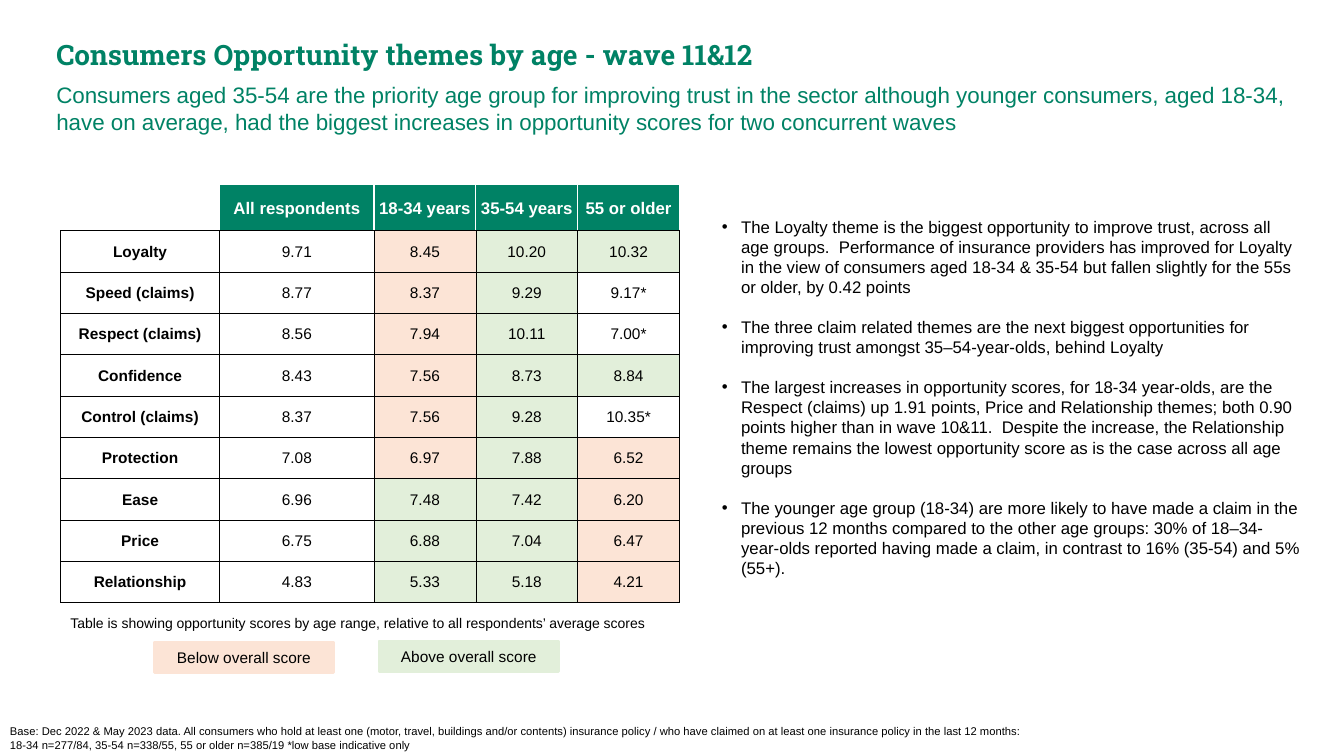
from dataclasses import dataclass

from lxml.etree import SubElement
from pptx import Presentation
from pptx.dml.color import RGBColor
from pptx.enum.shapes import MSO_SHAPE
from pptx.enum.text import MSO_ANCHOR, PP_ALIGN
from pptx.oxml.ns import qn
from pptx.util import Inches, Pt


@dataclass(frozen=True)
class Theme:
    green: str = "008265"
    black: str = "000000"
    white: str = "FFFFFF"
    below: str = "FCE4D6"
    above: str = "E2EFDA"
    body_font: str = "Arial"
    title_font: str = "Roboto Slab"
    title_size: int = 20
    subtitle_size: int = 16
    body_size: int = 12
    cell_size: int = 11
    note_size: int = 10
    base_size: int = 8


THEME = Theme()

HEADERS = ["", "All respondents", "18-34 years", "35-54 years", "55 or older"]
SCORES = [
    ("Loyalty", "9.71", "8.45", "10.20", "10.32"),
    ("Speed (claims)", "8.77", "8.37", "9.29", "9.17*"),
    ("Respect (claims)", "8.56", "7.94", "10.11", "7.00*"),
    ("Confidence", "8.43", "7.56", "8.73", "8.84"),
    ("Control (claims)", "8.37", "7.56", "9.28", "10.35*"),
    ("Protection", "7.08", "6.97", "7.88", "6.52"),
    ("Ease", "6.96", "7.48", "7.42", "6.20"),
    ("Price", "6.75", "6.88", "7.04", "6.47"),
    ("Relationship", "4.83", "5.33", "5.18", "4.21"),
]
COLUMN_WIDTHS = [1.58, 1.53, 1.01, 1.01, 1.01]
HEADER_HEIGHT, ROW_HEIGHT = 0.46, 0.41

FINDINGS = [
    "The Loyalty theme is the biggest opportunity to improve trust, across all age groups.  "
    "Performance of insurance providers has improved for Loyalty in the view of consumers aged "
    "18-34 & 35-54 but fallen slightly for the 55s or older, by 0.42 points",
    "The three claim related themes are the next biggest opportunities for improving trust "
    "amongst 35–54-year-olds, behind Loyalty",
    "The largest increases in opportunity scores, for 18-34 year-olds, are the Respect (claims) "
    "up 1.91 points, Price and Relationship themes; both 0.90 points higher than in wave 10&11.  "
    "Despite the increase, the Relationship theme remains the lowest opportunity score as is the "
    "case across all age groups",
    "The younger age group (18-34) are more likely to have made a claim in the previous 12 months "
    "compared to the other age groups: 30% of 18–34-year-olds reported having made a claim, in "
    "contrast to 16% (35-54) and 5% (55+).",
]


def set_attributes(target, values):
    for name, value in values.items():
        setattr(target, name, value)


def format_font(font, size, color=THEME.black, bold=False, name=THEME.body_font):
    set_attributes(font, {"name": name, "size": Pt(size), "bold": bold})
    font.color.rgb = RGBColor.from_string(color)


def add_text(slide, position, text, size, **font_format):
    frame = slide.shapes.add_textbox(*map(Inches, position)).text_frame
    frame.word_wrap = True
    paragraph = frame.paragraphs[0]
    paragraph.text = text
    format_font(paragraph.font, size, **font_format)


def add_bullets(slide, position, items):
    frame = slide.shapes.add_textbox(*map(Inches, position)).text_frame
    set_attributes(frame, {"word_wrap": True, "margin_left": 0, "margin_top": 0,
                           "margin_right": 0, "margin_bottom": 0})
    for index, item in enumerate(items):
        paragraph = frame.paragraphs[0] if index == 0 else frame.add_paragraph()
        paragraph.text = item
        if index:
            paragraph.space_before = Pt(14)
        properties = paragraph._p.get_or_add_pPr()
        properties.set("marL", str(Inches(0.19)))
        properties.set("indent", str(-Inches(0.19)))
        SubElement(properties, qn("a:buFont"), typeface=THEME.body_font)
        SubElement(properties, qn("a:buChar"), char="•")
        format_font(paragraph.font, THEME.body_size)


def add_legend_box(slide, position, text, color):
    shape = slide.shapes.add_shape(MSO_SHAPE.RECTANGLE, *map(Inches, position))
    shape.shadow.inherit = False
    shape.fill.solid()
    shape.fill.fore_color.rgb = RGBColor.from_string(color)
    shape.line.color.rgb = RGBColor.from_string(color)
    shape.line.width = Pt(2)
    shape.text_frame.vertical_anchor = MSO_ANCHOR.MIDDLE
    paragraph = shape.text_frame.paragraphs[0]
    paragraph.text = text
    paragraph.alignment = PP_ALIGN.CENTER
    format_font(paragraph.font, THEME.cell_size)


def set_borders(cell, borders):
    properties = cell._tc.get_or_add_tcPr()
    for index, (color, width) in enumerate(borders):
        tag = ("a:lnL", "a:lnR", "a:lnT", "a:lnB")[index]
        line = SubElement(properties, qn(tag), w=str(Pt(width)))
        fill = SubElement(line, qn("a:solidFill"))
        SubElement(fill, qn("a:srgbClr"), val=color)


def fill_cell(cell, text, fill, borders, size, **font_format):
    set_attributes(cell, {"margin_left": Inches(0.01), "margin_right": Inches(0.01),
                          "margin_top": Inches(0.01), "margin_bottom": 0,
                          "vertical_anchor": MSO_ANCHOR.MIDDLE})
    set_borders(cell, borders)
    cell.fill.solid()
    cell.fill.fore_color.rgb = RGBColor.from_string(fill)
    paragraph = cell.text_frame.paragraphs[0]
    paragraph.text = text
    paragraph.alignment = PP_ALIGN.CENTER
    format_font(paragraph.font, size, **font_format)


def score_fill(score, overall):
    # Starred scores have a low base and stay uncoloured
    if score.endswith("*") or score == overall:
        return THEME.white
    return THEME.below if float(score) < float(overall) else THEME.above


def add_score_table(slide, left, top):
    height = HEADER_HEIGHT + ROW_HEIGHT * len(SCORES)
    frame = slide.shapes.add_table(len(SCORES) + 1, len(HEADERS), Inches(left), Inches(top),
                                   Inches(sum(COLUMN_WIDTHS)), Inches(height))
    table = frame.table
    set_attributes(table, {"first_row": False, "horz_banding": False})
    for column, width in zip(table.columns, COLUMN_WIDTHS):
        column.width = Inches(width)
    for index, row in enumerate(table.rows):
        row.height = Inches(ROW_HEIGHT if index else HEADER_HEIGHT)

    # Header row
    black_line, white_line = (THEME.black, 0.5), (THEME.white, 1)
    for column, header in enumerate(HEADERS):
        fill_cell(table.cell(0, column), header, THEME.green if header else THEME.white,
                  [white_line] * 3 + [black_line], THEME.body_size,
                  color=THEME.white, bold=True)

    # Theme rows
    for row, (theme_name, overall, *age_scores) in enumerate(SCORES, start=1):
        fill_cell(table.cell(row, 0), theme_name, THEME.white, [black_line] * 4,
                  THEME.cell_size, bold=True)
        for column, score in enumerate([overall, *age_scores], start=1):
            fill_cell(table.cell(row, column), score, score_fill(score, overall),
                      [black_line] * 4, THEME.cell_size)


def main():
    presentation = Presentation()
    presentation.slide_width, presentation.slide_height = Inches(13.33), Inches(7.5)
    slide = presentation.slides.add_slide(presentation.slide_layouts[6])

    # Headings
    add_text(slide, (0.46, 0.32, 12.28, 0.44), "Consumers Opportunity themes by age - wave 11&12",
             THEME.title_size, color=THEME.green, bold=True, name=THEME.title_font)
    add_text(slide, (0.46, 0.76, 12.39, 0.64),
             "Consumers aged 35-54 are the priority age group for improving trust in the sector "
             "although younger consumers, aged 18-34, have on average, had the biggest increases "
             "in opportunity scores for two concurrent waves",
             THEME.subtitle_size, color=THEME.green)

    # Scores and legend
    add_score_table(slide, 0.6, 1.83)
    add_text(slide, (0.6, 6.05, 5.96, 0.61),
             "Table is showing opportunity scores by age range, relative to all respondents’ "
             "average scores", THEME.note_size)
    add_legend_box(slide, (1.53, 6.37, 1.78, 0.3), "Below overall score", THEME.below)
    add_legend_box(slide, (3.76, 6.36, 1.78, 0.3), "Above overall score", THEME.above)

    # Findings and base
    add_bullets(slide, (7.16, 2.15, 5.75, 3.21), FINDINGS)
    add_text(slide, (0, 7.14, 10.25, 0.36),
             "Base: Dec 2022 & May 2023 data. All consumers who hold at least one (motor, travel, "
             "buildings and/or contents) insurance policy / who have claimed on at least one "
             "insurance policy in the last 12 months: 18-34 n=277/84, 35-54 n=338/55, "
             "55 or older n=385/19 *low base indicative only", THEME.base_size)

    presentation.save("out.pptx")


if __name__ == "__main__":
    main()
